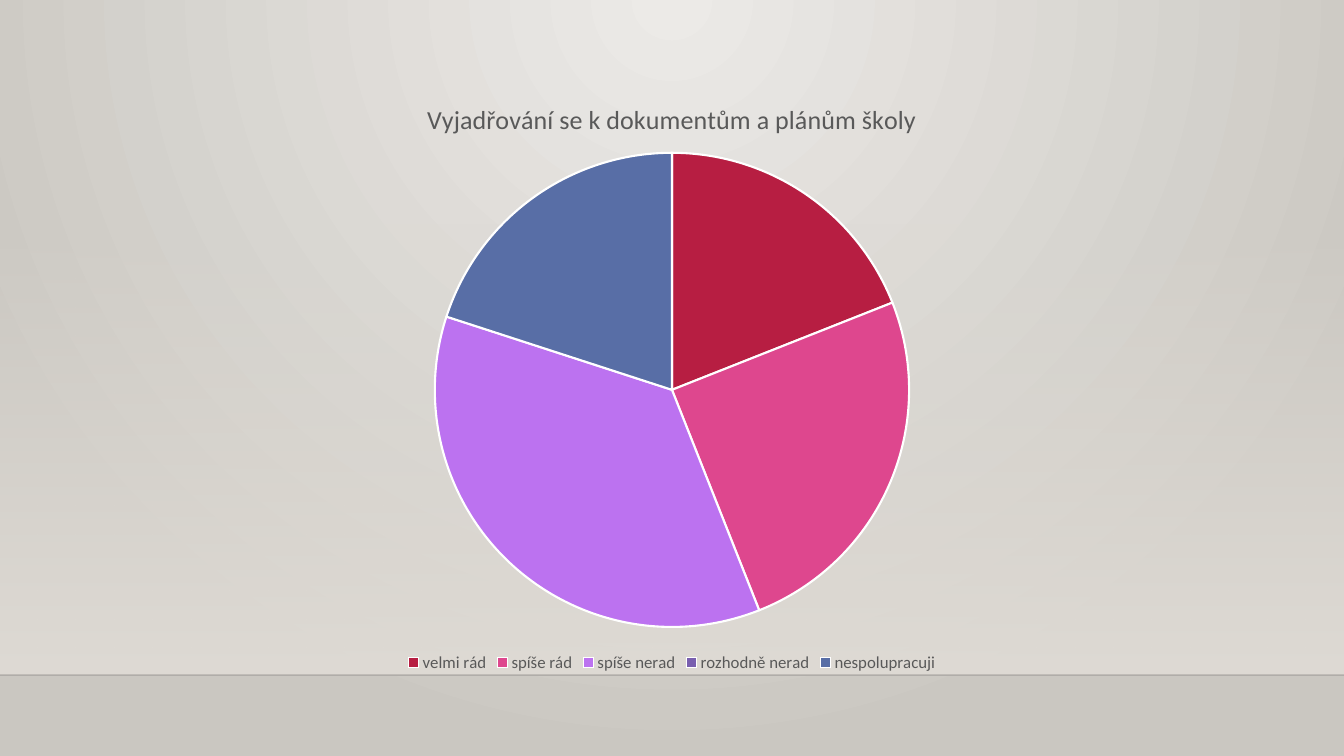
from dataclasses import dataclass

from lxml.etree import SubElement
from pptx import Presentation
from pptx.chart.data import CategoryChartData
from pptx.dml.color import RGBColor
from pptx.enum.chart import XL_CHART_TYPE, XL_LEGEND_POSITION
from pptx.enum.shapes import MSO_CONNECTOR, MSO_SHAPE
from pptx.oxml.ns import qn
from pptx.util import Inches, Pt


@dataclass(frozen=True)
class Theme:
    font: str = "Calibri"
    title_size: float = 18.6
    legend_size: float = 12
    text: str = "595959"
    center: str = "ECEAE7"
    edge: str = "CAC7C1"
    wall: str = "DFDBD5"
    floor_line: str = "000001"
    slice_border: str = "FFFFFF"


THEME = Theme()
TITLE = "Vyjadřování se k dokumentům a plánům školy"
ANSWERS = (
    ("velmi rád", 19, "B71E42"),
    ("spíše rád", 25, "DE478E"),
    ("spíše nerad", 36, "BC72F0"),
    ("rozhodně nerad", 0, "795FAF"),
    ("nespolupracuji", 20, "586EA6"),
)


def color(value):
    return RGBColor.from_string(value)


def set_alpha(color_element, percent):
    SubElement(color_element, qn("a:alpha"), val=str(percent * 1000))


def set_gradient(fill, colors):
    fill.gradient()
    for stop, position, value in zip(fill.gradient_stops, (0, 1), colors):
        stop.position = position
        stop.color.rgb = color(value)


def format_font(font, size, value=THEME.text):
    font.name = THEME.font
    font.size = Pt(size)
    font.bold = False
    font.color.rgb = color(value)


def write_text(frame, text, **style):
    paragraph = frame.paragraphs[0]
    run = paragraph.add_run()
    run.text = text
    format_font(run.font, **style)


def paint_background(slide):
    set_gradient(slide.background.fill, (THEME.center, THEME.edge))
    gradient = slide.element.find(".//" + qn("a:gradFill"))
    linear = gradient.find(qn("a:lin"))
    if linear is not None:
        gradient.remove(linear)
    radial = SubElement(gradient, qn("a:path"), {"path": "circle"})
    SubElement(radial, qn("a:fillToRect"), l="43000", t="0", r="43000", b="100000")


def add_wall(slide, left, top, width, height):
    wall = slide.shapes.add_shape(MSO_SHAPE.RECTANGLE, left, top, width, height)
    wall.shadow.inherit = False
    wall.line.fill.background()
    set_gradient(wall.fill, (THEME.wall, THEME.wall))
    wall.fill.gradient_angle = 270
    set_alpha(wall.element.find(".//" + qn("a:gs") + "/" + qn("a:srgbClr")), 0)

    bottom = top + height
    line = slide.shapes.add_connector(
        MSO_CONNECTOR.STRAIGHT, left, bottom, left + width, bottom
    )
    line.line.width = Pt(1)
    line.line.color.rgb = color(THEME.floor_line)
    properties = line.element.spPr
    set_alpha(properties.find(".//" + qn("a:srgbClr")), 20)
    SubElement(properties, qn("a:effectLst"))


def set_plot_layout(chart, **shares):
    plot_area = chart.element.find(".//" + qn("c:plotArea"))
    layout = plot_area.find(qn("c:layout"))
    if layout is None:
        layout = SubElement(plot_area, qn("c:layout"))
        plot_area.insert(0, layout)
    manual = SubElement(layout, qn("c:manualLayout"))
    SubElement(manual, qn("c:layoutTarget"), val="inner")
    for axis in "xy":
        SubElement(manual, qn(f"c:{axis}Mode"), val="edge")
    for name, share in shares.items():
        SubElement(manual, qn(f"c:{name}"), val=str(share))


def add_answer_pie(slide, left, top, width, height):
    names, values, colors = zip(*ANSWERS)
    data = CategoryChartData()
    data.categories = names
    data.add_series("Series 1", values)
    chart = slide.shapes.add_chart(
        XL_CHART_TYPE.PIE, left, top, width, height, data
    ).chart
    format_font(chart.font, THEME.legend_size)
    chart.has_title = True
    write_text(chart.chart_title.text_frame, TITLE, size=THEME.title_size)
    chart.chart_title.include_in_layout = False
    chart.has_legend = True
    chart.legend.position = XL_LEGEND_POSITION.BOTTOM
    chart.legend.include_in_layout = False
    format_font(chart.legend.font, THEME.legend_size)

    plot = chart.plots[0]
    plot.vary_by_categories = True
    for index, value in enumerate(colors):
        piece = plot.series[0].points[index].format
        piece.fill.solid()
        piece.fill.fore_color.rgb = color(value)
        piece.line.width = Pt(1.5)
        piece.line.color.rgb = color(THEME.slice_border)
    set_plot_layout(chart, x=0.235, y=0.123, w=0.53, h=0.794)


def build_slide(presentation):
    slide = presentation.slides.add_slide(presentation.slide_layouts[6])
    width, height = presentation.slide_width, presentation.slide_height
    paint_background(slide)
    add_wall(slide, 0, int(height * 0.295), width, int(height * 0.598))
    add_answer_pie(
        slide, width // 6, int(height * 0.105), width * 2 // 3, int(height * 0.79)
    )


def main():
    presentation = Presentation()
    presentation.slide_width = Inches(13.33)
    presentation.slide_height = Inches(7.5)
    build_slide(presentation)
    presentation.save("out.pptx")


if __name__ == "__main__":
    main()
